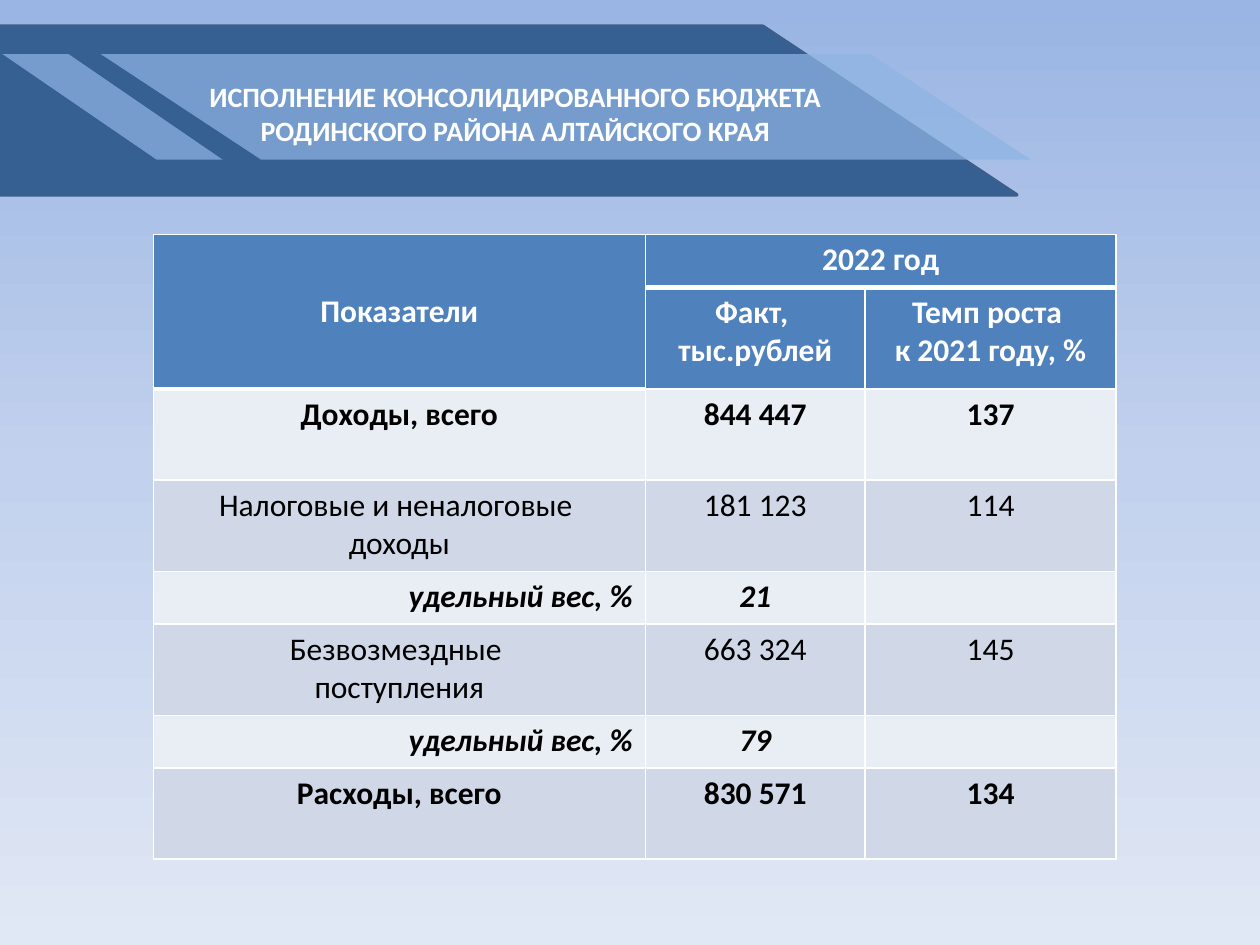
from copy import deepcopy

from lxml import etree
from pptx import Presentation
from pptx.dml.color import RGBColor
from pptx.enum.shapes import MSO_SHAPE
from pptx.enum.text import MSO_ANCHOR, MSO_AUTO_SIZE, PP_ALIGN
from pptx.oxml.ns import qn
from pptx.util import Cm, Pt

CENTER, RIGHT = PP_ALIGN.CENTER, PP_ALIGN.RIGHT
TOP, MIDDLE = MSO_ANCHOR.TOP, MSO_ANCHOR.MIDDLE
NO_AUTOFIT = MSO_AUTO_SIZE.NONE
INPUT_OUTPUT = MSO_SHAPE.FLOWCHART_DATA
PARALLELOGRAM = MSO_SHAPE.PARALLELOGRAM

FONT = "Calibri"
COLORS = {
    "sky_top": "9AB5E4",
    "sky_middle": "C2D1ED",
    "sky_bottom": "E1E8F5",
    "banner": "376092",
    "banner_line": "3A5F8C",
    "stripe": "8EB4E3",
    "header": "4F81BD",
    "light_row": "E9EDF4",
    "dark_row": "D0D8E8",
    "white": "FFFFFF",
    "black": "000000",
}

HEADER_ROWS = 2
THICK_BOTTOMS = {(0, 0), (0, 1), (0, 2), (1, 0)}
COLUMN_WIDTHS = [9.92, 4.43, 5.06]
LOW, TALL, HEADER_HEIGHT = 1.06, 1.84, 2.05
ROW_HEIGHTS = [LOW, HEADER_HEIGHT, TALL, TALL, LOW, TALL, LOW, TALL]
TABLE_ROWS = [
    ("bold", ["Показатели", "2022 год", ""]),
    ("bold", ["", "Факт, \nтыс.рублей", "Темп роста \nк 2021 году, %"]),
    ("bold", ["Доходы, всего", "844 447", "137"]),
    ("plain", ["Налоговые и неналоговые \nдоходы", "181 123", "114"]),
    ("share", ["удельный вес, %", "21", ""]),
    ("plain", ["Безвозмездные \nпоступления", "663 324", "145"]),
    ("share", ["удельный вес, %", "79", ""]),
    ("bold", ["Расходы, всего", "830 571", "134"]),
]


def rgb(name):
    return RGBColor.from_string(COLORS[name])


def add_run(paragraph, text, size, color, bold=True, italic=False):
    run = paragraph.add_run()
    run.text = text
    font = run.font
    font.name, font.size, font.bold, font.italic = FONT, Pt(size), bold, italic
    font.color.rgb = rgb(color)


def set_background(slide):
    fill = slide.background.fill
    fill.gradient()
    fill.gradient_angle = 270
    first, last = fill.gradient_stops
    first.color.rgb, first.position = rgb("sky_top"), 0
    last.color.rgb, last.position = rgb("sky_bottom"), 1
    stop_list = slide.background._cSld.find(".//" + qn("a:gsLst"))
    middle = deepcopy(stop_list[0])
    middle.set("pos", "50000")
    middle.find(qn("a:srgbClr")).set("val", COLORS["sky_middle"])
    stop_list.insert(1, middle)


def add_border(cell, side, width):
    line = etree.SubElement(cell._tc.get_or_add_tcPr(), qn("a:ln" + side), w=str(Pt(width)))
    fill = etree.SubElement(line, qn("a:solidFill"))
    etree.SubElement(fill, qn("a:srgbClr"), val=COLORS["white"])


def bottom_width(row, column):
    return 3 if (row, column) in THICK_BOTTOMS else 1


def style_cell(cell, row, column):
    add_border(cell, "L", 1)
    add_border(cell, "R", 1)
    add_border(cell, "T", bottom_width(row - 1, column))
    add_border(cell, "B", bottom_width(row, column))
    if row < HEADER_ROWS:
        fill = "header"
    else:
        fill = "dark_row" if row % 2 else "light_row"
    cell.fill.solid()
    cell.fill.fore_color.rgb = rgb(fill)


def fill_cell(cell, text, style, row, column):
    color = "white" if row < HEADER_ROWS else "black"
    share = style == "share"
    frame = cell.text_frame
    for index, line in enumerate(text.split("\n")):
        paragraph = frame.add_paragraph() if index else frame.paragraphs[0]
        paragraph.alignment = RIGHT if share and column == 0 else CENTER
        add_run(paragraph, line, 18, color, style != "plain", share)


def add_budget_table(slide):
    frame = slide.shapes.add_table(
        len(ROW_HEIGHTS), len(COLUMN_WIDTHS), Cm(3.09), Cm(4.73),
        Cm(sum(COLUMN_WIDTHS)), Cm(sum(ROW_HEIGHTS)),
    )
    table = frame.table
    for column, width in zip(table.columns, COLUMN_WIDTHS):
        column.width = Cm(width)
    for table_row, height in zip(table.rows, ROW_HEIGHTS):
        table_row.height = Cm(height)
    table.cell(0, 0).merge(table.cell(1, 0))
    table.cell(0, 1).merge(table.cell(0, 2))
    for row, (style, texts) in enumerate(TABLE_ROWS):
        for column, text in enumerate(texts):
            cell = table.cell(row, column)
            style_cell(cell, row, column)
            if text:
                fill_cell(cell, text, style, row, column)
    table.cell(0, 0).vertical_anchor = MIDDLE


def add_slanted_shape(group, kind, left, top, width, height, color):
    shape = group.shapes.add_shape(kind, Cm(left), Cm(top), Cm(width), Cm(height))
    shape.shadow.inherit = False
    shape._element.spPr.find(qn("a:xfrm")).set("flipH", "1")
    shape.fill.solid()
    shape.fill.fore_color.rgb = rgb(color)
    return shape


def add_stripe(group, left, width, slant):
    stripe = add_slanted_shape(group, PARALLELOGRAM, left, 1.09, width, 2.13, "stripe")
    stripe.adjustments[0] = slant
    stripe.line.fill.background()
    color = stripe._element.spPr.find(qn("a:solidFill"))[0]
    etree.SubElement(color, qn("a:alpha"), val="72000")


def add_banner(slide):
    group = slide.shapes.add_group_shape()
    band = add_slanted_shape(group, INPUT_OUTPUT, -5.1, 0.53, 25.6, 3.4, "banner")
    band.line.color.rgb = rgb("banner_line")
    band.line.width = Pt(2)
    add_stripe(group, 2.03, 18.75, 1.52)
    add_stripe(group, 0.05, 4.44, 1.46)


def place_title(slide):
    title = slide.shapes.title
    title.left, title.top, title.width, title.height = Cm(2.49), Cm(1.52), Cm(15.8), Cm(2.21)
    slide.shapes._spTree.append(title._element)
    frame = title.text_frame
    frame.word_wrap = True
    frame.auto_size = NO_AUTOFIT
    frame.vertical_anchor = TOP
    frame.margin_left = frame.margin_right = Cm(0.5)
    frame.margin_top = Cm(0.09)
    paragraph = frame.paragraphs[0]
    paragraph.alignment = CENTER
    add_run(paragraph, "ИСПОЛНЕНИЕ КОНСОЛИДИРОВАННОГО БЮДЖЕТА РОДИНСКОГО РАЙОНА АЛТАЙСКОГО КРАЯ", 16, "white")


def main():
    presentation = Presentation()
    presentation.slide_width, presentation.slide_height = Cm(25.4), Cm(19.05)
    slide = presentation.slides.add_slide(presentation.slide_layouts[5])
    set_background(slide)
    add_budget_table(slide)
    add_banner(slide)
    place_title(slide)
    presentation.save("out.pptx")


if __name__ == "__main__":
    main()
